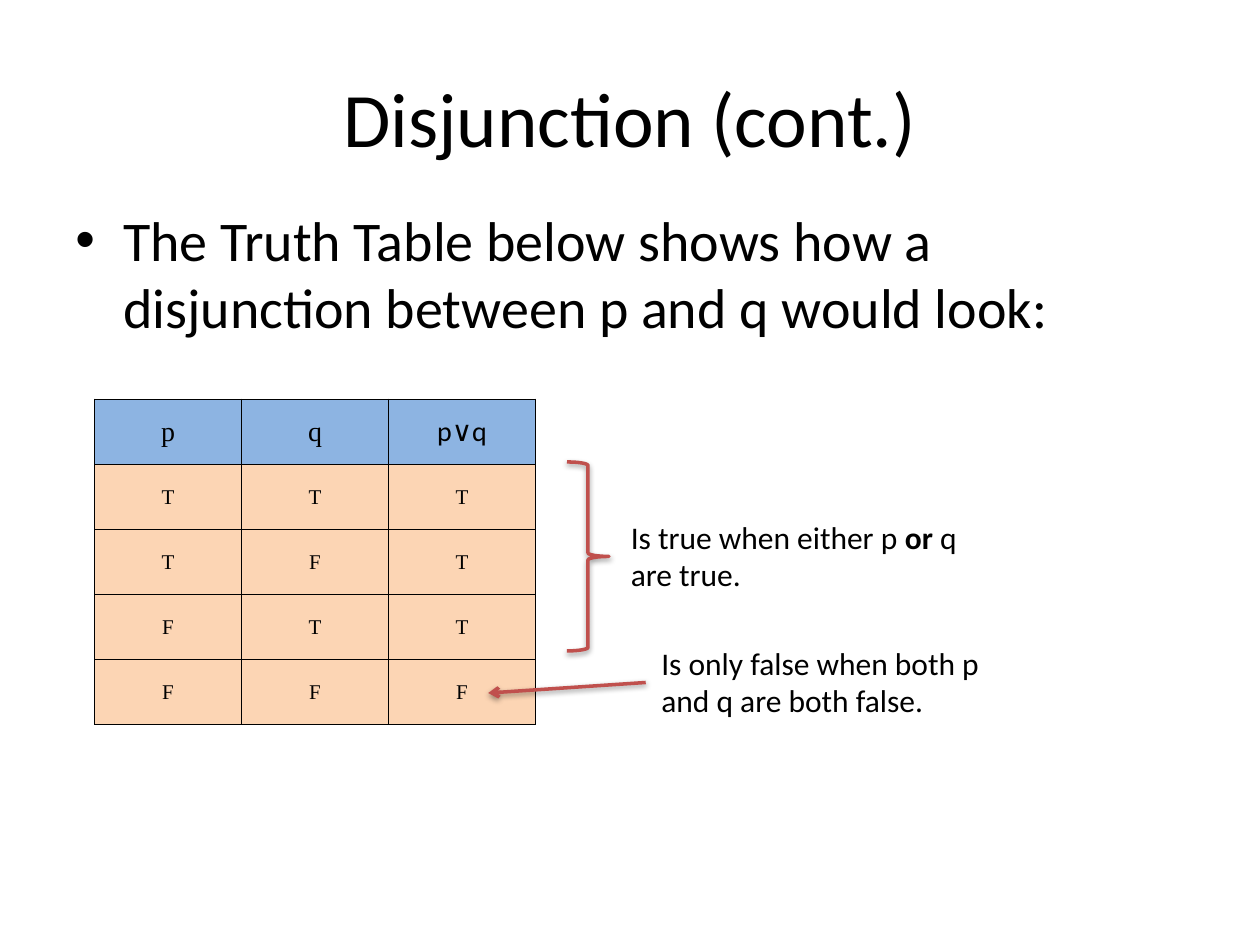
from lxml import etree
from pptx import Presentation
from pptx.dml.color import RGBColor
from pptx.enum.shapes import MSO_CONNECTOR, MSO_SHAPE
from pptx.enum.text import MSO_ANCHOR, PP_ALIGN
from pptx.oxml import parse_xml
from pptx.oxml.ns import nsdecls, qn
from pptx.util import Inches, Pt

MIDDLE = MSO_ANCHOR.MIDDLE
TOP = MSO_ANCHOR.TOP
CENTER = PP_ALIGN.CENTER
LEFT = PP_ALIGN.LEFT
BRACE = MSO_SHAPE.RIGHT_BRACE
STRAIGHT = MSO_CONNECTOR.STRAIGHT

BLACK, RED, BLUE, PEACH = "000000", "C0504D", "8DB4E2", "FCD5B4"
SANS, SERIF = "Calibri", "Times New Roman"
SHADOW = (
    f'<a:outerShdw {nsdecls("a")} blurRad="40000" dist="20000" dir="5400000" rotWithShape="0">'
    f'<a:srgbClr val="{BLACK}"><a:alpha val="38000"/></a:srgbClr></a:outerShdw>'
)
BORDER = (
    '<a:{side} {ns} w="6350"><a:solidFill><a:srgbClr val="{color}"/></a:solidFill></a:{side}>'
)


def paint(value):
    return RGBColor.from_string(value)


def grid(*units):
    return [Inches(unit / 12) for unit in units]


class Deck:
    """Draws styled elements on a slide, placed on a grid of 120 columns by 90 rows."""

    def __init__(self):
        self.prs = Presentation()
        self.prs.slide_width, self.prs.slide_height = grid(120, 90)
        self.slide = self.prs.slides.add_slide(self.prs.slide_layouts[5])
        self.shapes = self.slide.shapes

    def style(self, para, size, font=SANS, align=LEFT):
        para.alignment = align
        para.font.size = Pt(size)
        para.font.name = font
        para.font.bold = False
        para.font.color.rgb = paint(BLACK)

    def title(self, box, text):
        shape = self.shapes.title
        shape.left, shape.top, shape.width, shape.height = grid(*box)
        shape.text_frame.text = text
        shape.text_frame.vertical_anchor = MIDDLE
        self.style(shape.text_frame.paragraphs[0], 44, align=CENTER)

    def text(self, box, runs, size, bullet=False):
        frame = self.shapes.add_textbox(*grid(*box)).text_frame
        frame.word_wrap = True
        frame.vertical_anchor = TOP
        para = frame.paragraphs[0]
        for words, bold in runs:
            run = para.add_run()
            run.text = words
            if bold:
                run.font.bold = True
        if bullet:
            props = para._p.get_or_add_pPr()
            props.set("marL", str(Inches(0.38)))
            props.set("indent", str(Inches(-0.38)))
            etree.SubElement(props, qn("a:buFont")).set("typeface", "Arial")
            etree.SubElement(props, qn("a:buChar")).set("char", "•")
        self.style(para, size)

    def table(self, box, rows):
        table = self.shapes.add_table(len(rows), len(rows[0]), *grid(*box)).table
        table.first_row = table.horz_banding = False
        for r, row in enumerate(rows):
            for c, word in enumerate(row):
                font = SANS if "∨" in word else SERIF
                self.cell(table.cell(r, c), word, 12 if r else 16, font, PEACH if r else BLUE)

    def cell(self, cell, word, size, font, fill):
        cell.text = word
        cell.vertical_anchor = MIDDLE
        cell.margin_left = cell.margin_right = cell.margin_top = Inches(0.01)
        cell.margin_bottom = 0
        self.style(cell.text_frame.paragraphs[0], size, font, CENTER)
        props = cell._tc.get_or_add_tcPr()
        for side in ("lnL", "lnR", "lnT", "lnB"):
            props.append(parse_xml(BORDER.format(side=side, ns=nsdecls("a"), color=BLACK)))
        cell.fill.solid()
        cell.fill.fore_color.rgb = paint(fill)

    def stroke(self, shape):
        shape.line.color.rgb = paint(RED)
        shape.line.width = Pt(2)
        props = shape._element.spPr
        etree.SubElement(props, qn("a:effectLst")).append(parse_xml(SHADOW))

    def arrow(self, start, end):
        line = self.shapes.add_connector(STRAIGHT, *grid(*start, *end))
        self.stroke(line)
        etree.SubElement(line.line._get_or_add_ln(), qn("a:tailEnd")).set("type", "arrow")

    def brace(self, box):
        shape = self.shapes.add_shape(BRACE, *grid(*box))
        shape.fill.background()
        self.stroke(shape)


def main():
    deck = Deck()
    deck.title((6, 3.6, 108, 15), "Disjunction (cont.)")
    intro = "The Truth Table below shows how a disjunction between p and q would look:"
    deck.text((6, 19, 108, 65), [(intro, False)], 32, bullet=True)
    truth = [("p", "q", "p∨q")]
    for p in (True, False):
        for q in (True, False):
            truth.append(["T" if value else "F" for value in (p, q, p or q)])
    deck.table((9, 38, 42, 31), truth)
    deck.arrow((61.5, 65), (46.5, 66))
    lower = "Is only false when both p and q are both false."
    deck.text((61.8, 60.7, 34, 8.5), [(lower, False)], 18)
    deck.brace((54, 44, 4, 18))
    upper = [("Is true when either p ", False), ("or", True), (" q are true.", False)]
    deck.text((58.9, 48.7, 34, 8.5), upper, 18)
    deck.prs.save("out.pptx")


if __name__ == "__main__":
    main()
